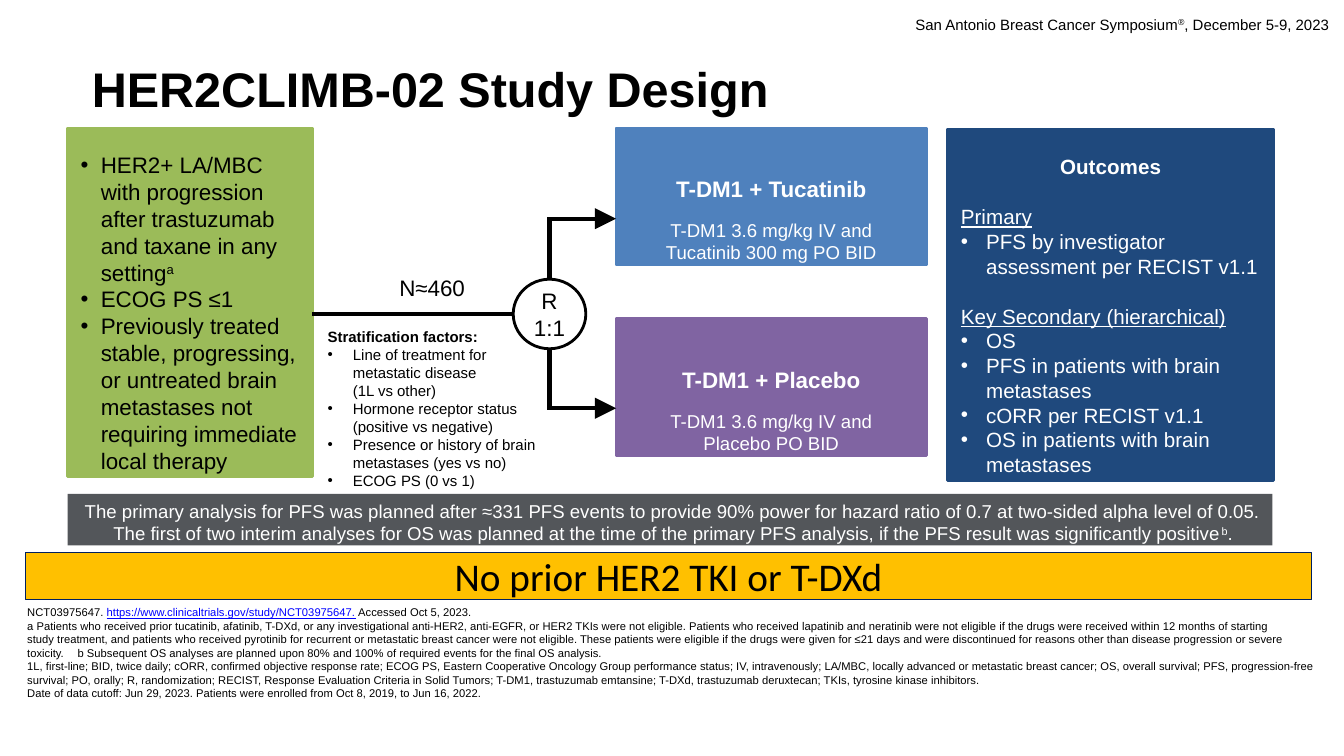
from dataclasses import dataclass
from lxml import etree
from pptx import Presentation
from pptx.dml.color import RGBColor
from pptx.enum.shapes import MSO_CONNECTOR as Line, MSO_SHAPE as Shape
from pptx.enum.text import MSO_ANCHOR as Anchor, MSO_AUTO_SIZE as AutoSize, PP_ALIGN as Align
from pptx.oxml.ns import qn
from pptx.util import Inches, Pt


@dataclass(frozen=True)
class Theme:
    font: str = "Arial"
    banner_font: str = "Calibri"
    black: str = "000000"
    white: str = "FFFFFF"
    green: str = "9BBB59"
    blue: str = "4F81BD"
    purple: str = "8064A2"
    navy: str = "1F497D"
    gray: str = "53565A"
    gold: str = "FFC000"
    banner_edge: str = "002060"
    link: str = "0000FF"
    title: float = 34.7
    banner: float = 28
    lead: float = 16
    outcome: float = 14.7
    detail: float = 13.3
    small: float = 10.7
    note: float = 8
    spacing: float = 1.0


THEME = Theme()
BREAK = "\v"


def color(code):
    return RGBColor.from_string(code)


def set_frame(shape, insets=(0, 0.02, 0, 0), anchor=Anchor.TOP, wrap=True):
    frame = shape.text_frame
    frame.auto_size = AutoSize.NONE
    frame.word_wrap = wrap
    frame.vertical_anchor = anchor
    (frame.margin_left, frame.margin_top,
     frame.margin_right, frame.margin_bottom) = map(Inches, insets)
    return frame


def set_bullet(para, hang):
    props = para._p.get_or_add_pPr()
    props.set("marL", str(Inches(hang)))
    props.set("indent", str(-Inches(hang)))
    if hang:
        etree.SubElement(props, qn("a:buFont")).set("typeface", THEME.font)
        etree.SubElement(props, qn("a:buChar")).set("char", "•")
    else:
        etree.SubElement(props, qn("a:buNone"))


def write(frame, *spans, size, ink=THEME.black, font=THEME.font, align=Align.LEFT,
          before=0, hang=0, bold=False, underline=False, tab=None):
    """Add a paragraph; a span is text, a line break or (text, style)."""
    first = frame.paragraphs[0]
    para = first if not first.runs else frame.add_paragraph()
    set_bullet(para, hang)
    if tab:
        stops = etree.SubElement(para._p.get_or_add_pPr(), qn("a:tabLst"))
        etree.SubElement(stops, qn("a:tab"), pos=str(Inches(tab)), algn="l")
    para.alignment = align
    para.line_spacing = THEME.spacing
    para.space_before = Pt(before)
    para.font.name, para.font.size = font, Pt(size)
    para.font.bold, para.font.underline = bold, underline
    para.font.color.rgb = color(ink)
    for span in spans:
        if span == BREAK:
            para.add_line_break()
            continue
        text, style = (span, None) if isinstance(span, str) else span
        run = para.add_run()
        run.text = text
        if style == "super":
            run._r.get_or_add_rPr().set("baseline", "28000")
        elif style == "link":
            run.font.underline = True
            run.font.color.rgb = color(THEME.link)


def paint(shape, fill, edge=None, width=2):
    shape.fill.solid()
    shape.fill.fore_color.rgb = color(fill)
    if edge:
        shape.line.color.rgb = color(edge)
        shape.line.width = Pt(width)
    else:
        shape.line.fill.background()


def place(shape, box):
    shape.left, shape.top, shape.width, shape.height = map(Inches, box)


def add_panel(page, box, fill, edge=None, width=2, kind=Shape.RECTANGLE):
    panel = page.shapes.add_shape(kind, *map(Inches, box))
    panel.shadow.inherit = False
    paint(panel, fill, edge, width)
    return panel


def add_text(page, box, **options):
    return set_frame(page.shapes.add_textbox(*map(Inches, box)), **options)


def add_line(page, start, end, arrow=False):
    line = page.shapes.add_connector(Line.STRAIGHT, *map(Inches, start + end))
    line.line.color.rgb = color(THEME.black)
    line.line.width = Pt(3)
    stroke = line.line._get_or_add_ln()
    stroke.set("cap", "sq")
    if arrow:
        etree.SubElement(stroke, qn("a:tailEnd"), type="triangle", w="lg", len="lg")
    etree.SubElement(line._element.spPr, qn("a:effectLst"))


def header(page, box):
    frame = add_text(page, box, insets=(0.05, 0.02, 0, 0))
    write(frame, "San Antonio Breast Cancer Symposium", ("®", "super"),
          ", December 5-9, 2023", size=THEME.small)


def title(page, box):
    place(page.shapes.title, box)
    frame = set_frame(page.shapes.title, insets=(0.02, 0.02, 0, 0))
    write(frame, "HER2CLIMB-02 Study Design", size=THEME.title, bold=True)


def eligibility(page, box):
    panel = page.placeholders[1]
    place(panel, box)
    paint(panel, THEME.green, THEME.green)
    frame = set_frame(panel, insets=(0.13, 0.23, 0.1, 0))
    style = dict(size=THEME.lead, hang=0.2)
    write(frame, "HER2+ LA/MBC with progression after trastuzumab and taxane in any setting",
          ("a", "super"), **style)
    write(frame, "ECOG PS ≤1", **style)
    write(frame, "Previously treated stable, progressing, or untreated brain metastases "
          "not requiring immediate local therapy", **style)


def outcomes(page, box):
    panel = page.placeholders[2]
    place(panel, box)
    paint(panel, THEME.navy, THEME.navy)
    frame = set_frame(panel, insets=(0.13, 0.25, 0.13, 0))
    style = dict(size=THEME.outcome, ink=THEME.white)
    write(frame, "Outcomes", align=Align.CENTER, bold=True, **style)
    groups = {
        "Primary": ["PFS by investigator assessment per RECIST v1.1"],
        "Key Secondary (hierarchical)": [
            "OS", "PFS in patients with brain metastases",
            "cORR per RECIST v1.1", "OS in patients with brain metastases"],
    }
    for heading, items in groups.items():
        write(frame, heading, underline=True, before=18, **style)
        for item in items:
            write(frame, item, hang=0.25, **style)


def arm(page, box, fill, name, dose):
    frame = set_frame(add_panel(page, box, fill, fill), insets=(0.45, 0.47, 0.45, 0))
    style = dict(ink=THEME.white, align=Align.CENTER)
    write(frame, name, size=THEME.lead, bold=True, **style)
    write(frame, dose, size=THEME.detail, before=12, **style)


def randomization(page, box, source_x, arm_x, arm_ys):
    left, top, width, height = box
    x, y = left + width / 2, top + height / 2
    add_line(page, (source_x, y), (left, y))
    for arm_y in arm_ys:
        add_line(page, (x, y), (x, arm_y))
        add_line(page, (x, arm_y), (arm_x, arm_y), arrow=True)
    circle = add_panel(page, box, THEME.white, THEME.black, kind=Shape.OVAL)
    frame = set_frame(circle, insets=(0, 0, 0, 0), anchor=Anchor.MIDDLE, wrap=False)
    for text in ("R", "1:1"):
        write(frame, text, size=THEME.lead, align=Align.CENTER)
    label = add_text(page, (left - 1.15, top - 0.07, 0.8, 0.29), insets=(0.02, 0.02, 0, 0))
    write(label, "N≈460", size=THEME.lead)


def stratification(page, box):
    frame = add_text(page, box, insets=(0.02, 0.02, 0, 0))
    write(frame, "Stratification factors:", size=THEME.small, bold=True)
    for spans in (["Line of treatment for metastatic disease", BREAK, "(1L vs other)"],
                  ["Hormone receptor status (positive vs negative)"],
                  ["Presence or history of brain metastases (yes vs no)"],
                  ["ECOG PS (0 vs 1)"]):
        write(frame, *spans, size=THEME.small, hang=0.25)


def analysis_plan(page, box):
    frame = set_frame(add_panel(page, box, THEME.gray), insets=(0.06, 0.06, 0, 0))
    style = dict(size=THEME.detail, ink=THEME.white, align=Align.CENTER)
    write(frame, "The primary analysis for PFS was planned after ≈331 PFS events to provide "
          "90% power for hazard ratio of 0.7 at two-sided alpha level of 0.05.", **style)
    write(frame, "The first of two interim analyses for OS was planned at the time of the primary "
          "PFS analysis, if the PFS result was significantly positive", ("b", "super"), ".", **style)


def banner(page, box):
    panel = add_panel(page, box, THEME.gold, THEME.banner_edge, 0.75)
    frame = set_frame(panel, insets=(0, 0, 0, 0), anchor=Anchor.MIDDLE)
    write(frame, "No prior HER2 TKI or T-DXd", size=THEME.banner,
          font=THEME.banner_font, align=Align.CENTER)


def footnotes(page, box):
    frame = add_text(page, box, insets=(0.02, 0.02, 0, 0))
    write(frame, "NCT03975647. ", ("https://www.clinicaltrials.gov/study/NCT03975647.", "link"),
          " Accessed Oct 5, 2023.", size=THEME.note)
    write(frame, "a Patients who received prior tucatinib, afatinib, T-DXd, or any investigational "
          "anti-HER2, anti-EGFR, or HER2 TKIs were not eligible. Patients who received lapatinib and "
          "neratinib were not eligible if the drugs were received within 12 months of starting", BREAK,
          "study treatment, and patients who received pyrotinib for recurrent or metastatic breast "
          "cancer were not eligible. These patients were eligible if the drugs were given for ≤21 days "
          "and were discontinued for reasons other than disease progression or severe toxicity.\t"
          "b Subsequent OS analyses are planned upon 80% and 100% of required events for the final "
          "OS analysis.", size=THEME.note, tab=0.6)
    write(frame, "1L, first-line; BID, twice daily; cORR, confirmed objective response rate; ECOG PS, "
          "Eastern Cooperative Oncology Group performance status; IV, intravenously; LA/MBC, locally "
          "advanced or metastatic breast cancer; OS, overall survival; PFS, progression-free survival; "
          "PO, orally; R, randomization; RECIST, Response Evaluation Criteria in Solid Tumors; T-DM1, "
          "trastuzumab emtansine; T-DXd, trastuzumab deruxtecan; TKIs, tyrosine kinase inhibitors.",
          size=THEME.note)
    write(frame, "Date of data cutoff: Jun 29, 2023. Patients were enrolled from Oct 8, 2019, "
          "to Jun 16, 2022.", size=THEME.note)


def main():
    deck = Presentation()
    deck.slide_width, deck.slide_height = Inches(13.33), Inches(7.5)
    page = deck.slides.add_slide(deck.slide_layouts[3])

    # Heading
    header(page, (9.03, 0.13, 4.23, 0.2))
    title(page, (0.89, 0.56, 11.5, 0.6))

    # Study flow
    eligibility(page, (0.67, 1.27, 2.43, 3.46))
    arm(page, (6.11, 1.27, 3.08, 1.36), THEME.blue,
        "T-DM1 + Tucatinib", "T-DM1 3.6 mg/kg IV and Tucatinib 300 mg PO BID")
    arm(page, (6.11, 3.16, 3.08, 1.36), THEME.purple,
        "T-DM1 + Placebo", "T-DM1 3.6 mg/kg IV and Placebo PO BID")
    randomization(page, (5.09, 2.77, 0.72, 0.69), source_x=3.12, arm_x=6.11, arm_ys=(2.17, 4.05))
    stratification(page, (3.23, 3.23, 2.15, 1.64))
    outcomes(page, (9.4, 1.28, 3.23, 3.49))

    # Analysis plan and notes
    analysis_plan(page, (0.67, 4.9, 11.95, 0.51))
    banner(page, (0.25, 5.48, 12.76, 0.47))
    footnotes(page, (0.25, 5.99, 12.82, 0.96))
    deck.save("out.pptx")


if __name__ == "__main__":
    main()
